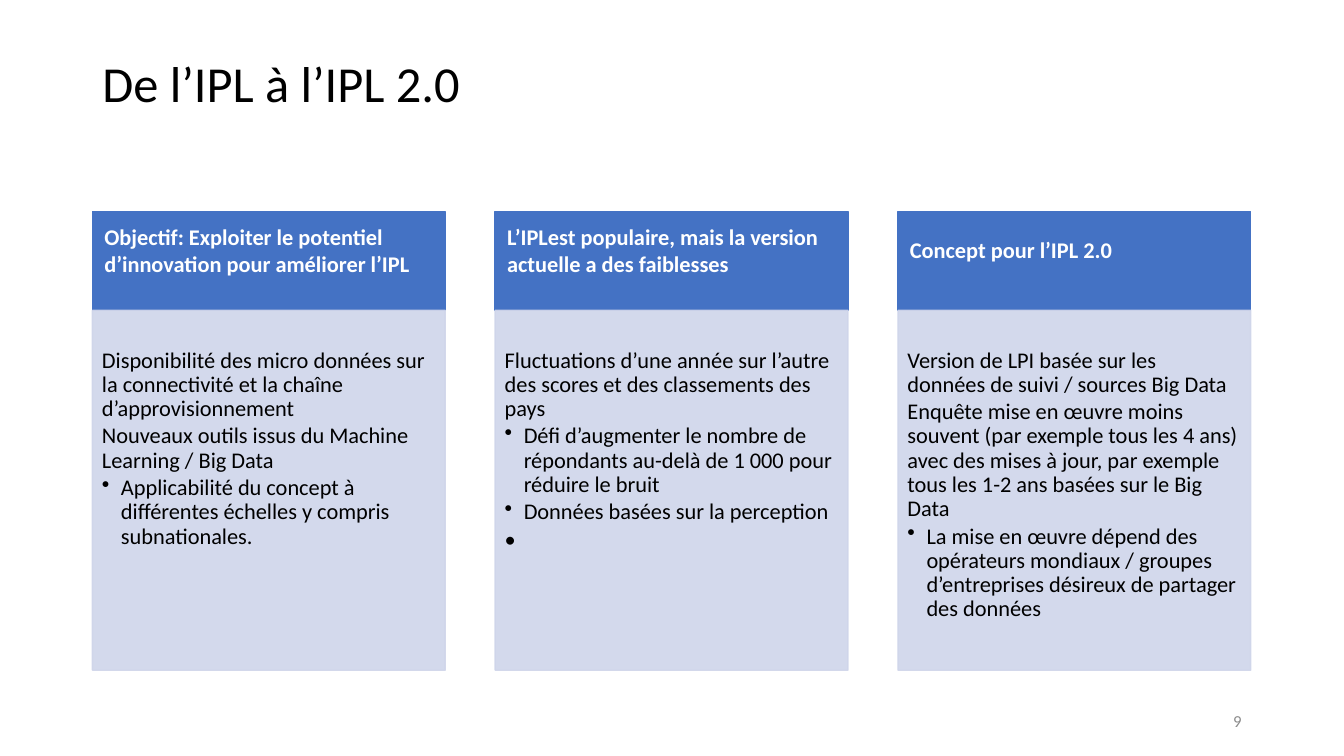
from lxml import etree
from pptx import Presentation
from pptx.dml.color import RGBColor
from pptx.enum.shapes import MSO_SHAPE
from pptx.enum.text import MSO_ANCHOR, PP_ALIGN
from pptx.oxml.ns import qn
from pptx.util import Cm, Pt

RECT = MSO_SHAPE.RECTANGLE
TOP, MID = MSO_ANCHOR.TOP, MSO_ANCHOR.MIDDLE
LEFT, RIGHT = PP_ALIGN.LEFT, PP_ALIGN.RIGHT
BLACK = RGBColor(0x00, 0x00, 0x00)
WHITE = RGBColor(0xFF, 0xFF, 0xFF)
BLUE = RGBColor(0x44, 0x72, 0xC4)
PALE = RGBColor(0xCF, 0xD5, 0xEA)
GRAY = RGBColor(0x8C, 0x8C, 0x8C)

START, PITCH, WIDTH = 2.33, 10.15, 8.89
HEAD_TOP, HEAD_HIGH, BODY_HIGH = 5.33, 2.49, 9.07
PADS = (0.25, 0.25, 0.13, 0.13)

COLUMNS = [
    ("Objectif: Exploiter le potentiel d’innovation pour améliorer l’IPL",
     ["Disponibilité des micro données sur la connectivité et la chaîne d’approvisionnement",
      "Nouveaux outils issus du Machine Learning / Big Data"],
     ["Applicabilité du concept à différentes échelles y compris subnationales."],
     []),
    ("L’IPLest populaire, mais la version actuelle a des faiblesses",
     ["Fluctuations d’une année sur l’autre des scores et des classements des pays"],
     ["Défi d’augmenter le nombre de répondants au-delà de 1 000 pour réduire le bruit",
      "Données basées sur la perception"],
     ["•"]),
    ("Concept pour l’IPL 2.0",
     ["Version de LPI basée sur les données de suivi / sources Big Data",
      "Enquête mise en œuvre moins souvent (par exemple tous les 4 ans) avec des mises à jour, "
      "par exemple tous les 1-2 ans basées sur le Big Data"],
     ["La mise en œuvre dépend des opérateurs mondiaux / groupes d’entreprises "
      "désireux de partager des données"],
     []),
]


class Deck:
    def __init__(self, slide, face="Calibri"):
        self.shapes = slide.shapes
        self.face = face

    def frame(self, shape, pads, anchor):
        frame = shape.text_frame
        frame.word_wrap = True
        frame.vertical_anchor = anchor
        (frame.margin_left, frame.margin_right,
         frame.margin_top, frame.margin_bottom) = [Cm(pad) for pad in pads]
        return frame

    def put(self, para, text, size, color, bold=False, align=LEFT, space=1.0, after=0, dot=False):
        para.text = text
        para.alignment = align
        para.line_spacing = space
        para.space_after = Pt(after)
        if dot:
            props = para._p.get_or_add_pPr()
            props.set("marL", str(Cm(0.48)))
            props.set("indent", str(-Cm(0.48)))
            etree.SubElement(props, qn("a:buChar")).set("char", "•")
        font = para.font
        font.name, font.size, font.bold = self.face, Pt(size), bold
        font.color.rgb = color

    def label(self, box, text, size, color, **style):
        shape = self.shapes.add_textbox(*[Cm(n) for n in box])
        frame = self.frame(shape, PADS, MID)
        self.put(frame.paragraphs[0], text, size, color, **style)

    def panel(self, box, color, alpha=None):
        shape = self.shapes.add_shape(RECT, *[Cm(n) for n in box])
        shape.shadow.inherit = False
        shape.fill.solid()
        shape.fill.fore_color.rgb = color
        shape.line.color.rgb = color
        shape.line.width = Pt(1)
        if alpha:
            for tint in shape._element.spPr.iter(qn("a:srgbClr")):
                etree.SubElement(tint, qn("a:alpha")).set("val", str(alpha * 1000))
        return shape

    def header(self, box, text):
        frame = self.frame(self.panel(box, BLUE), (0.3, 0.3, 0.18, 0.74), MID)
        self.put(frame.paragraphs[0], text, 16, WHITE, bold=True)

    def body(self, box, plain, dots, tail):
        frame = self.frame(self.panel(box, PALE, 90), (0.24, 0.3, 0.97, 0.36), TOP)
        lines = [(text, False) for text in plain]
        lines += [(text, True) for text in dots]
        lines += [(text, False) for text in tail]
        for i, (text, dot) in enumerate(lines):
            para = frame.add_paragraph() if i else frame.paragraphs[0]
            self.put(para, text, 16, BLACK, space=0.9, after=2.4, dot=dot)


def main():
    show = Presentation()
    show.slide_width, show.slide_height = Cm(33.87), Cm(19.05)
    deck = Deck(show.slides.add_slide(show.slide_layouts[6]))
    deck.label((START, 1.02, 29.21, 2.29), "De l’IPL à l’IPL 2.0", 36, BLACK, space=0.9)
    for i, (title, plain, dots, tail) in enumerate(COLUMNS):
        left = START + i * PITCH
        deck.header((left, HEAD_TOP, WIDTH, HEAD_HIGH), title)
        deck.body((left, HEAD_TOP + HEAD_HIGH, WIDTH, BODY_HIGH), plain, dots, tail)
    deck.label((23.92, 17.66, 7.62, 1.01), "9", 12, GRAY, align=RIGHT)
    show.save("out.pptx")


if __name__ == "__main__":
    main()
